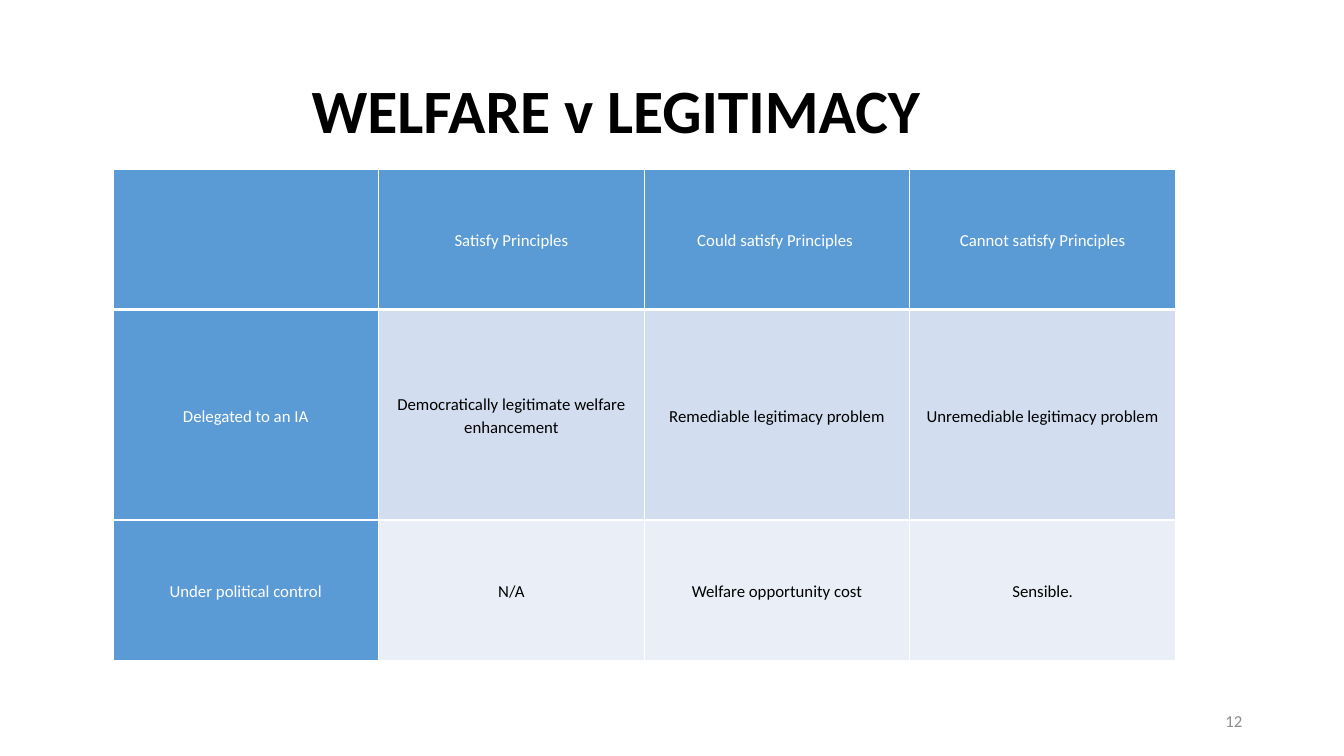
from pptx import Presentation
from pptx.dml.color import RGBColor
from pptx.enum.text import MSO_ANCHOR as Anchor, PP_ALIGN as Align
from pptx.oxml import parse_xml
from pptx.oxml.ns import nsdecls
from pptx.util import Inches, Pt

# Content
TITLE = "WELFARE v LEGITIMACY"
ROWS = [
    ["", "Satisfy Principles", "Could satisfy Principles ",
     "Cannot satisfy Principles"],
    ["Delegated to an IA", "Democratically legitimate welfare enhancement",
     "Remediable legitimacy problem", "Unremediable legitimacy problem"],
    ["Under political control", "N/A", "Welfare opportunity cost",
     "Sensible."],
]
NUMBER = "12"

# Style
FONT = "Calibri"
BLACK = RGBColor(0x00, 0x00, 0x00)
WHITE = RGBColor(0xFF, 0xFF, 0xFF)
GREY = RGBColor(0x8C, 0x8C, 0x8C)
BLUE = RGBColor(0x5B, 0x9B, 0xD5)
BANDS = [RGBColor(0xEA, 0xEF, 0xF7), RGBColor(0xD2, 0xDE, 0xEF)]
HEIGHTS = [1.39, 2.09, 1.39]
WIDTH = 10.54


def box(left, top, width, height):
    return [Inches(n) for n in (left, top, width, height)]


def style(para, size, color, align, bold=False):
    font = para.font
    font.name, font.size, font.bold = FONT, Pt(size), bold
    font.color.rgb = color
    para.alignment = align


def border(cell, bottom):
    props = cell._tc.get_or_add_tcPr()
    for at, side in enumerate("LRTB"):
        width = Pt(bottom if side == "B" else 1)
        props.insert(at, parse_xml(
            f'<a:ln{side} {nsdecls("a")} w="{width}"><a:solidFill>'
            f'<a:srgbClr val="{WHITE}"/></a:solidFill></a:ln{side}>'))


def fill_cell(cell, text, row, col):
    head = row == 0 or col == 0
    cell.fill.solid()
    cell.fill.fore_color.rgb = BLUE if head else BANDS[row % 2]
    border(cell, 3 if row == 0 else 1)
    cell.vertical_anchor = Anchor.MIDDLE
    cell.margin_left = cell.margin_right = Inches(0.07)
    cell.margin_top = cell.margin_bottom = 0
    cell.text = text
    para = cell.text_frame.paragraphs[0]
    style(para, 12, WHITE if head else BLACK, Align.CENTER)
    para.line_spacing = 1.15
    para.space_after = Pt(10)


def main():
    deck = Presentation()
    deck.slide_width, deck.slide_height = Inches(13.33), Inches(7.5)
    slide = deck.slides.add_slide(deck.slide_layouts[5])

    # Title
    title = slide.shapes.title
    title.left, title.top, title.width, title.height = box(
        0.92, 0.4, 11.5, 1.45)
    frame = title.text_frame
    frame.text = TITLE
    frame.vertical_anchor = Anchor.MIDDLE
    frame.margin_left = Inches(2.17)
    style(frame.paragraphs[0], 44, BLACK, Align.LEFT, bold=True)
    frame.paragraphs[0].line_spacing = 0.9

    # Table
    count = len(ROWS[0])
    table = slide.shapes.add_table(
        len(ROWS), count, *box(1.12, 1.68, WIDTH, sum(HEIGHTS))).table
    table.first_col = True
    for col in table.columns:
        col.width = Inches(WIDTH / count)
    for row, texts in enumerate(ROWS):
        table.rows[row].height = Inches(HEIGHTS[row])
        for col, text in enumerate(texts):
            fill_cell(table.cell(row, col), text, row, col)

    # Slide number
    frame = slide.shapes.add_textbox(*box(9.42, 6.95, 3, 0.4)).text_frame
    frame.word_wrap = True
    frame.vertical_anchor = Anchor.MIDDLE
    frame.text = NUMBER
    style(frame.paragraphs[0], 12, GREY, Align.RIGHT)

    deck.save("out.pptx")


if __name__ == "__main__":
    main()
